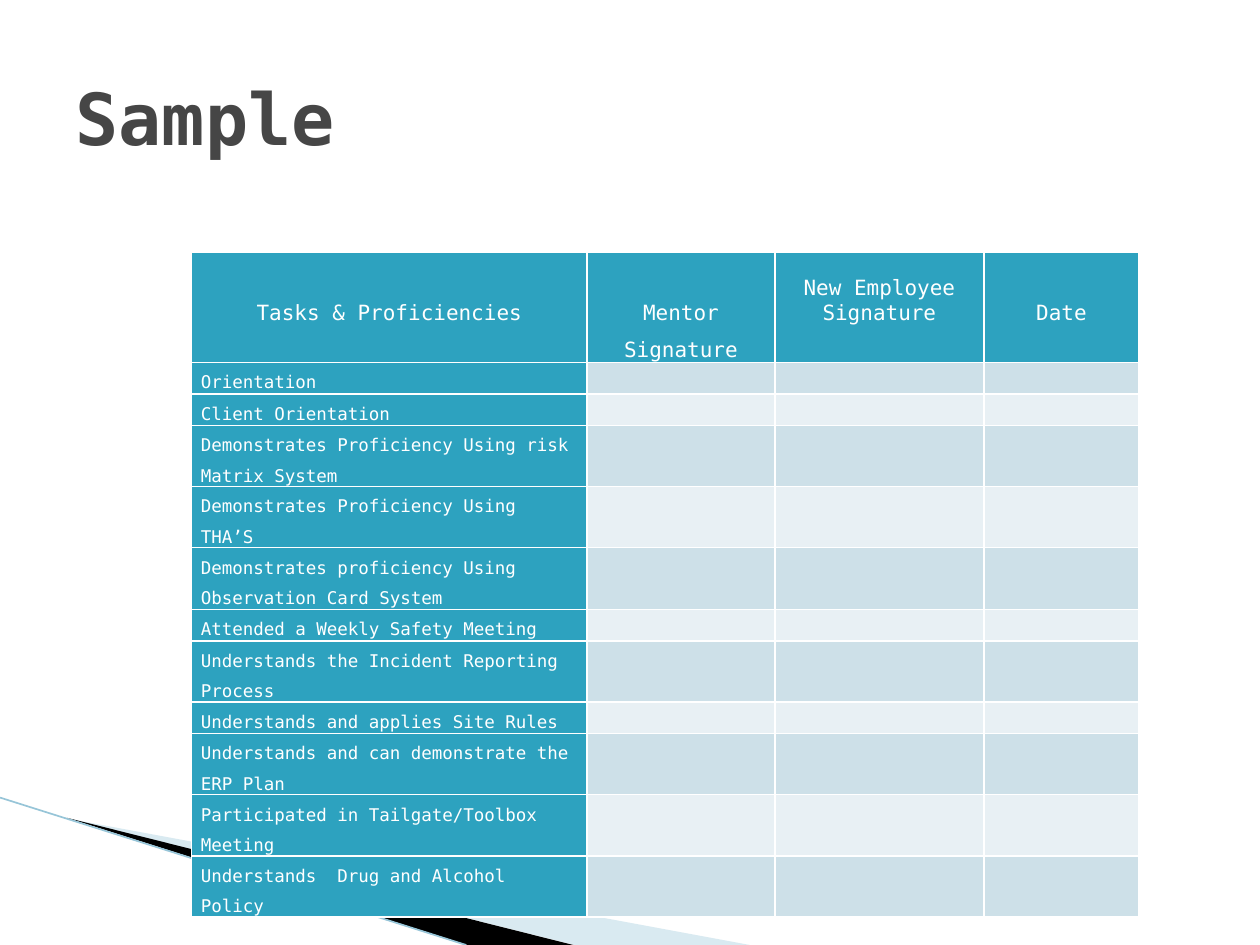
from dataclasses import dataclass

from lxml.etree import SubElement
from pptx import Presentation
from pptx.dml.color import RGBColor
from pptx.enum.shapes import MSO_CONNECTOR
from pptx.enum.text import MSO_ANCHOR, PP_ALIGN
from pptx.oxml.ns import qn
from pptx.util import Inches, Pt


@dataclass(frozen=True)
class Theme:
    font: str = "DejaVu Sans Mono"
    title: str = "464646"
    white: str = "FFFFFF"
    accent: str = "2DA2BF"
    bands: tuple = ("CDE0E8", "E8F0F4")
    wing: str = "A0CBDC"
    shade: str = "000000"
    edge: str = "97C5D8"
    title_size: float = 41
    head_size: float = 12
    body_size: float = 10
    border: float = 1


class SlideBuilder:
    """Places elements on a grid of 100 columns by 75 rows."""

    def __init__(self, prs, theme):
        self.theme = theme
        self.cell_size = prs.slide_width / 100
        self.s = prs.slides.add_slide(prs.slide_layouts[5])

    def grid(self, *values):
        return [round(v * self.cell_size) for v in values]

    def style(self, font, size, color, bold=False):
        formats = {"name": self.theme.font, "size": Pt(size), "bold": bold}
        for name, value in formats.items():
            setattr(font, name, value)
        font.color.rgb = RGBColor.from_string(color)

    def text(self, tf, text, size, color, bold=False, **layout):
        p = tf.paragraphs[0]
        for name, value in layout.items():
            setattr(p, name, value)
        r = p.add_run()
        r.text = text
        self.style(r.font, size, color, bold)

    def title(self, text, box):
        sp = self.s.shapes.title
        for name, value in zip(("left", "top", "width", "height"), self.grid(*box)):
            setattr(sp, name, value)
        tf = sp.text_frame
        tf.vertical_anchor = MSO_ANCHOR.MIDDLE
        self.text(tf, text, self.theme.title_size, self.theme.title, True,
                  alignment=PP_ALIGN.LEFT)

    def polygon(self, points, color, opacity=100):
        start, *rest = [self.grid(*point) for point in points]
        outline = self.s.shapes.build_freeform(*start)
        outline.add_line_segments(rest, close=True)
        sp = outline.convert_to_shape()
        sp.shadow.inherit = False
        sp.line.fill.background()
        sp.fill.solid()
        sp.fill.fore_color.rgb = RGBColor.from_string(color)
        if opacity < 100:
            rgb = next(sp.element.iter(qn("a:srgbClr")))
            SubElement(rgb, qn("a:alpha"), val=str(opacity * 1000))

    def line(self, start, end, color, width):
        sp = self.s.shapes.add_connector(MSO_CONNECTOR.STRAIGHT, *self.grid(*start, *end))
        sp.line.color.rgb = RGBColor.from_string(color)
        sp.line.width = Pt(width)
        SubElement(sp.element.spPr, qn("a:effectLst"))

    def cell(self, cell, fill, top=0):
        margins = {"margin_left": Pt(5.4), "margin_right": Pt(5.4),
                   "margin_top": Inches(top), "margin_bottom": 0}
        for name, value in margins.items():
            setattr(cell, name, value)
        # Borders come before the fill in the cell properties
        tc_pr = cell._tc.get_or_add_tcPr()
        for side in ("a:lnL", "a:lnR", "a:lnT", "a:lnB"):
            ln = SubElement(tc_pr, qn(side), w=str(Pt(self.theme.border)))
            solid = SubElement(ln, qn("a:solidFill"))
            SubElement(solid, qn("a:srgbClr"), val=self.theme.white)
        cell.fill.solid()
        cell.fill.fore_color.rgb = RGBColor.from_string(fill)

    def table(self, box, widths, heights, headings, tasks):
        t = self.theme
        frame = self.s.shapes.add_table(len(heights), len(widths), *self.grid(*box))
        table = frame.table
        for column, width in zip(table.columns, self.grid(*widths)):
            column.width = width
        for row, height in zip(table.rows, self.grid(*heights)):
            row.height = height
        frame.height = self.grid(box[3])[0]

        # Heading row
        for i, (text, top, spacing) in enumerate(headings):
            cell = table.cell(0, i)
            self.cell(cell, t.accent, top)
            self.text(cell.text_frame, text, t.head_size, t.white,
                      alignment=PP_ALIGN.CENTER, line_spacing=spacing)

        # Task column and banded sign-off cells
        for i, task in enumerate(tasks):
            first, *blanks = list(table.rows[i + 1].cells)
            self.cell(first, t.accent)
            self.text(first.text_frame, task, t.body_size, t.white, line_spacing=1.5)
            for cell in blanks:
                self.cell(cell, t.bands[i % 2])
                p = cell.text_frame.paragraphs[0]
                SubElement(p._p, qn("a:endParaRPr"), sz=str(t.body_size * 100))


HEADINGS = [  # text, top margin in inches, line spacing
    ("Tasks & Proficiencies", 0.29, 1.5),
    ("Mentor Signature", 0.29, 1.5),
    ("New Employee Signature", 0.19, 1.0),
    ("Date", 0.29, 1.5),
]
TASKS = [
    "Orientation",
    "Client Orientation",
    "Demonstrates Proficiency Using risk Matrix System",
    "Demonstrates Proficiency Using THA’S",
    "Demonstrates proficiency Using Observation Card System",
    "Attended a Weekly Safety Meeting",
    "Understands the Incident Reporting Process",
    "Understands and applies Site Rules",
    "Understands and can demonstrate the ERP Plan",
    "Participated in Tailgate/Toolbox Meeting",
    "Understands  Drug and Alcohol Policy",
]


def main():
    prs = Presentation()
    prs.slide_width, prs.slide_height = Inches(10), Inches(7.5)
    theme = Theme()
    slide = SlideBuilder(prs, theme)

    # Corner decoration
    slide.polygon([(5.5, 65), (59.5, 75), (45.6, 75)], theme.wing, 40)
    slide.polygon([(5.3, 64.9), (45.5, 75), (37.1, 75)], theme.shade)
    slide.line((0, 63.3), (37, 75), theme.edge, 0.95)

    # Sign-off table: rows grow to fit wrapped tasks
    heights = [5.9] + [2.5] * len(TASKS)
    heights[5] = 4.9
    slide.table((15.2, 20, 75.1, 44), (31.4, 14.9, 16.6, 12.3), heights, HEADINGS, TASKS)

    slide.title("Sample", (5, 3, 90, 12.5))
    prs.save("out.pptx")


if __name__ == "__main__":
    main()
